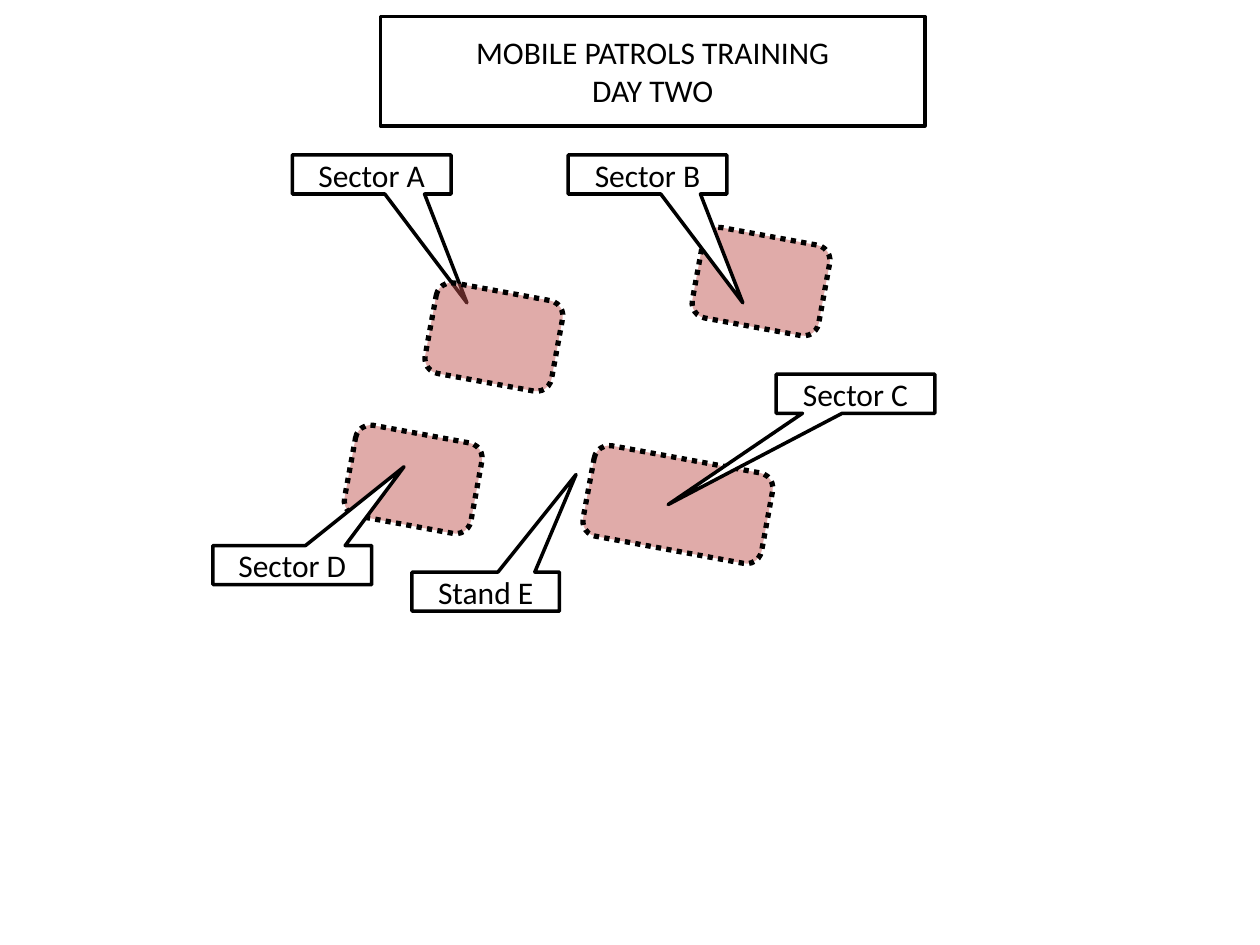
"""Build the mobile patrols training slide with its sector areas and labels."""
from lxml import etree
from pptx import Presentation
from pptx import util as u
from pptx.dml.color import RGBColor
from pptx.enum import dml, shapes, text
from pptx.oxml import ns

BLACK = RGBColor(0x00, 0x00, 0x00)
WHITE = RGBColor(0xFF, 0xFF, 0xFF)
RED = RGBColor(0xC0, 0x50, 0x4D)
FONT = "Calibri"
AREA_HEIGHT, AREA_TILT, AREA_OPACITY = 0.73, 10.4, 48
LABEL_HEIGHT = 0.31

TITLE = ["MOBILE PATROLS TRAINING", "DAY TWO"]
TITLE_PLACE = (3.02, 0.13, 4.32, 0.87)
AREAS = [
    (3.41, 2.31, 1.02),
    (5.53, 1.87, 1.02),
    (2.77, 3.44, 1.02),
    (4.66, 3.64, 1.44),
]
BACK_LABELS = [("Sector A", 2.32, 1.23, 1.26, (0.6, 3.287))]
FRONT_LABELS = [
    ("Stand E", 3.27, 4.54, 1.17, (0.613, -2.999)),
    ("Sector B", 4.51, 1.23, 1.26, (0.6, 3.287)),
    ("Sector C", 6.16, 2.97, 1.26, (-1.18, 2.838)),
    ("Sector D", 1.69, 4.33, 1.26, (0.704, -2.518)),
]


def style(box, fill, width):
    box.fill.solid()
    box.fill.fore_color.rgb = fill
    box.line.color.rgb = BLACK
    box.line.width = u.Pt(width)


def write(box, lines):
    frame = box.text_frame
    frame.word_wrap = True
    frame.auto_size = text.MSO_AUTO_SIZE.NONE
    frame.vertical_anchor = text.MSO_ANCHOR.MIDDLE
    for index, line in enumerate(lines):
        para = frame.add_paragraph() if index else frame.paragraphs[0]
        para.alignment = text.PP_ALIGN.CENTER
        span = para.add_run()
        span.text = line
        span.font.name = FONT
        span.font.size = u.Pt(18)
        span.font.color.rgb = BLACK


def add_box(page, kind, *place):
    box = page.shapes.add_shape(kind, *map(u.Inches, place))
    box.shadow.inherit = False
    return box


def add_area(page, left, top, width):
    area = add_box(page, shapes.MSO_SHAPE.ROUNDED_RECTANGLE, left, top, width, AREA_HEIGHT)
    area.rotation = AREA_TILT
    style(area, RED, 3)
    area.line.dash_style = dml.MSO_LINE.ROUND_DOT
    color = area.fill._xPr.find(ns.qn("a:solidFill"))[0]
    etree.SubElement(color, ns.qn("a:alpha"), val=str(AREA_OPACITY * 1000))


def add_label(page, name, left, top, width, tip):
    label = add_box(page, shapes.MSO_SHAPE.RECTANGULAR_CALLOUT, left, top, width, LABEL_HEIGHT)
    label.adjustments[0], label.adjustments[1] = tip
    style(label, WHITE, 2)
    write(label, [name])


def main():
    deck = Presentation()
    deck.slide_width, deck.slide_height = u.Inches(10), u.Inches(7.5)
    page = deck.slides.add_slide(deck.slide_layouts.get_by_name("Title Only"))
    title = page.shapes.title
    title.left, title.top, title.width, title.height = map(u.Inches, TITLE_PLACE)
    style(title, WHITE, 2)
    write(title, TITLE)
    for label in BACK_LABELS:
        add_label(page, *label)
    for area in AREAS:
        add_area(page, *area)
    for label in FRONT_LABELS:
        add_label(page, *label)
    deck.save("out.pptx")


if __name__ == "__main__":
    main()
